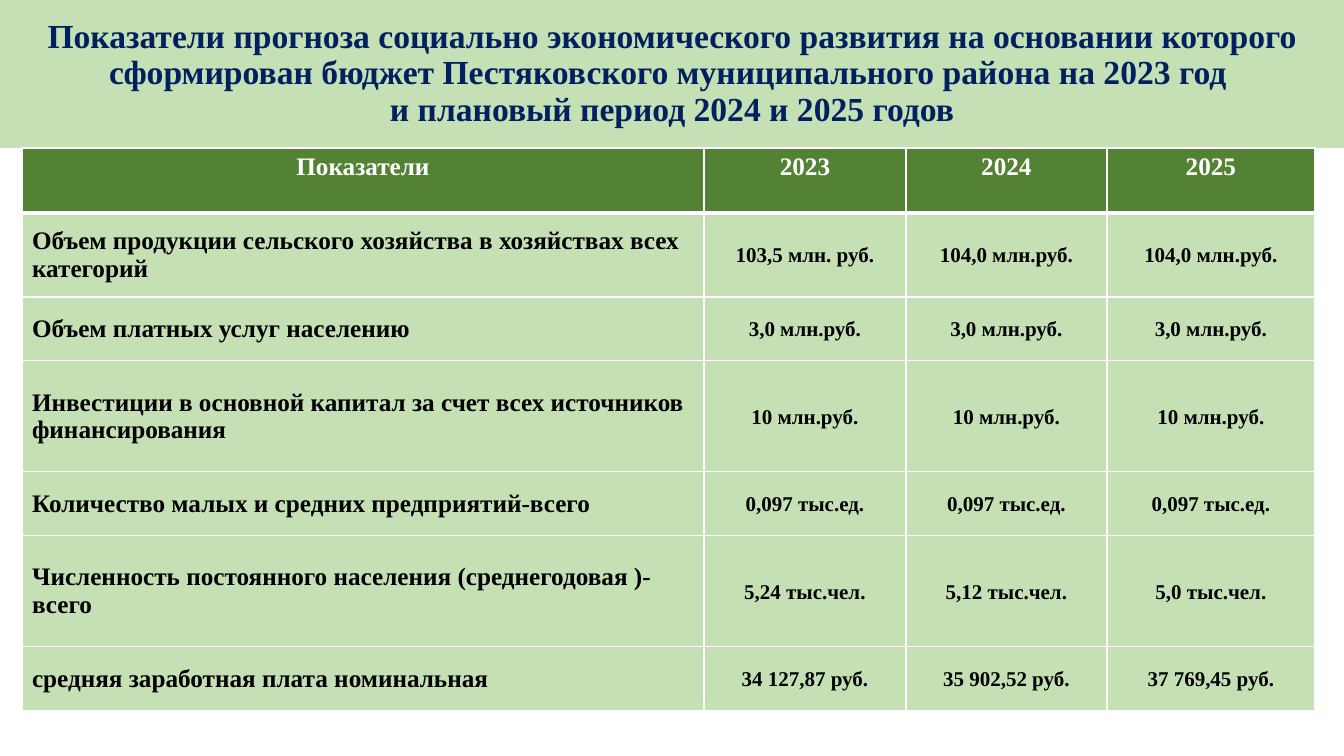
from dataclasses import dataclass

from lxml.etree import SubElement
from pptx import Presentation
from pptx.dml.color import RGBColor
from pptx.enum.text import MSO_ANCHOR as Anchor, MSO_AUTO_SIZE as AutoSize, PP_ALIGN as Align
from pptx.oxml.ns import qn
from pptx.util import Pt

TITLE = (
    "Показатели прогноза социально экономического развития на основании которого "
    "сформирован бюджет Пестяковского муниципального района на 2023 год \v"
    "и плановый период 2024 и 2025 годов"
)
HEADINGS = ("Показатели", "2023", "2024", "2025")
INDICATORS = [
    ("Объем продукции сельского хозяйства в хозяйствах всех категорий",
     "103,5 млн. руб.", "104,0 млн.руб.", "104,0 млн.руб."),
    ("Объем платных услуг населению", "3,0 млн.руб.", "3,0 млн.руб.", "3,0 млн.руб."),
    ("Инвестиции в основной капитал за счет всех источников финансирования",
     "10 млн.руб.", "10 млн.руб.", "10 млн.руб."),
    ("Количество малых и средних предприятий-всего",
     "0,097 тыс.ед.", "0,097 тыс.ед.", "0,097 тыс.ед."),
    ("Численность постоянного населения (среднегодовая )-всего",
     "5,24 тыс.чел.", "5,12 тыс.чел.", "5,0 тыс.чел."),
    ("средняя заработная плата номинальная",
     "34 127,87 руб.", "35 902,52 руб.", "37 769,45 руб."),
]

SLIDE_SIZE = (1344, 756)
TITLE_HEIGHT = 148
TABLE_LEFT = 22
COLUMN_WIDTHS = (682, 202, 201, 208)
ROW_HEIGHTS = (65, 84, 64, 111, 64, 111, 64)
VALUE_INSET = 7


@dataclass(frozen=True)
class Theme:
    font: str = "Times New Roman"
    title_color: str = "002060"
    header_color: str = "FFFFFF"
    body_color: str = "000000"
    header_fill: str = "548235"
    body_fill: str = "C5E0B4"
    border: str = "FFFFFF"
    title_size: int = 24
    label_size: int = 18
    value_size: int = 15
    thin: int = 1
    thick: int = 3


THEME = Theme()


def px(length):
    return round(length * 914400 / 100.8)


def set_all(target, values):
    for name, value in values.items():
        setattr(target, name, value)


def paint(part, color):
    part.fill.solid()
    part.fill.fore_color.rgb = RGBColor.from_string(color)


def format_text(frame, size, color, align, spacing):
    for paragraph in frame.paragraphs:
        set_all(paragraph, {"alignment": align, "line_spacing": spacing})
        for run in paragraph.runs:
            set_all(run.font, {"name": THEME.font, "size": Pt(size), "bold": True})
            run.font.color.rgb = RGBColor.from_string(color)


def add_borders(cell, widths):
    """Draw the cell's edges; must run before the fill, which follows them in the XML."""
    properties = cell._tc.get_or_add_tcPr()
    for side, width in widths.items():
        edge = SubElement(properties, qn(f"a:ln{side}"), w=str(Pt(width)))
        SubElement(SubElement(edge, qn("a:solidFill")), qn("a:srgbClr"), val=THEME.border)


def add_title(slide):
    title = slide.shapes.title
    set_all(title, {"left": 0, "top": 0, "width": px(SLIDE_SIZE[0]), "height": px(TITLE_HEIGHT)})
    paint(title, THEME.body_fill)
    frame = title.text_frame
    frame.text = TITLE
    set_all(frame, {"word_wrap": True, "auto_size": AutoSize.NONE,
                    "vertical_anchor": Anchor.MIDDLE})
    format_text(frame, THEME.title_size, THEME.title_color, Align.CENTER, 0.9)


def fill_cell(cell, text, row, column):
    is_header, is_label = row == 0, column == 0
    is_value = not (is_header or is_label)
    add_borders(cell, {
        "L": THEME.thin,
        "R": THEME.thin,
        "T": THEME.thick if row == 1 else THEME.thin,
        "B": THEME.thick if is_header else THEME.thin,
    })
    paint(cell, THEME.header_fill if is_header else THEME.body_fill)
    cell.text = text
    cell.vertical_anchor = Anchor.TOP if is_header else Anchor.MIDDLE
    if is_value:
        set_all(cell, {"margin_left": px(VALUE_INSET), "margin_right": px(VALUE_INSET),
                       "margin_top": 0, "margin_bottom": 0})
    format_text(
        cell.text_frame,
        THEME.value_size if is_value else THEME.label_size,
        THEME.header_color if is_header else THEME.body_color,
        Align.CENTER if is_header or is_value else Align.LEFT,
        1.07 if is_value else 1.0,
    )


def add_indicators(slide):
    rows = [HEADINGS, *INDICATORS]
    table = slide.shapes.add_table(
        len(rows), len(HEADINGS), px(TABLE_LEFT), px(TITLE_HEIGHT),
        px(sum(COLUMN_WIDTHS)), px(sum(ROW_HEIGHTS)),
    ).table
    for column, width in zip(table.columns, COLUMN_WIDTHS):
        column.width = px(width)
    for row, height in zip(table.rows, ROW_HEIGHTS):
        row.height = px(height)
    for r, texts in enumerate(rows):
        for c, text in enumerate(texts):
            fill_cell(table.cell(r, c), text, r, c)


def main():
    deck = Presentation()
    deck.slide_width, deck.slide_height = map(px, SLIDE_SIZE)
    slide = deck.slides.add_slide(deck.slide_layouts.get_by_name("Title Only"))
    add_title(slide)
    add_indicators(slide)
    deck.save("out.pptx")


if __name__ == "__main__":
    main()
